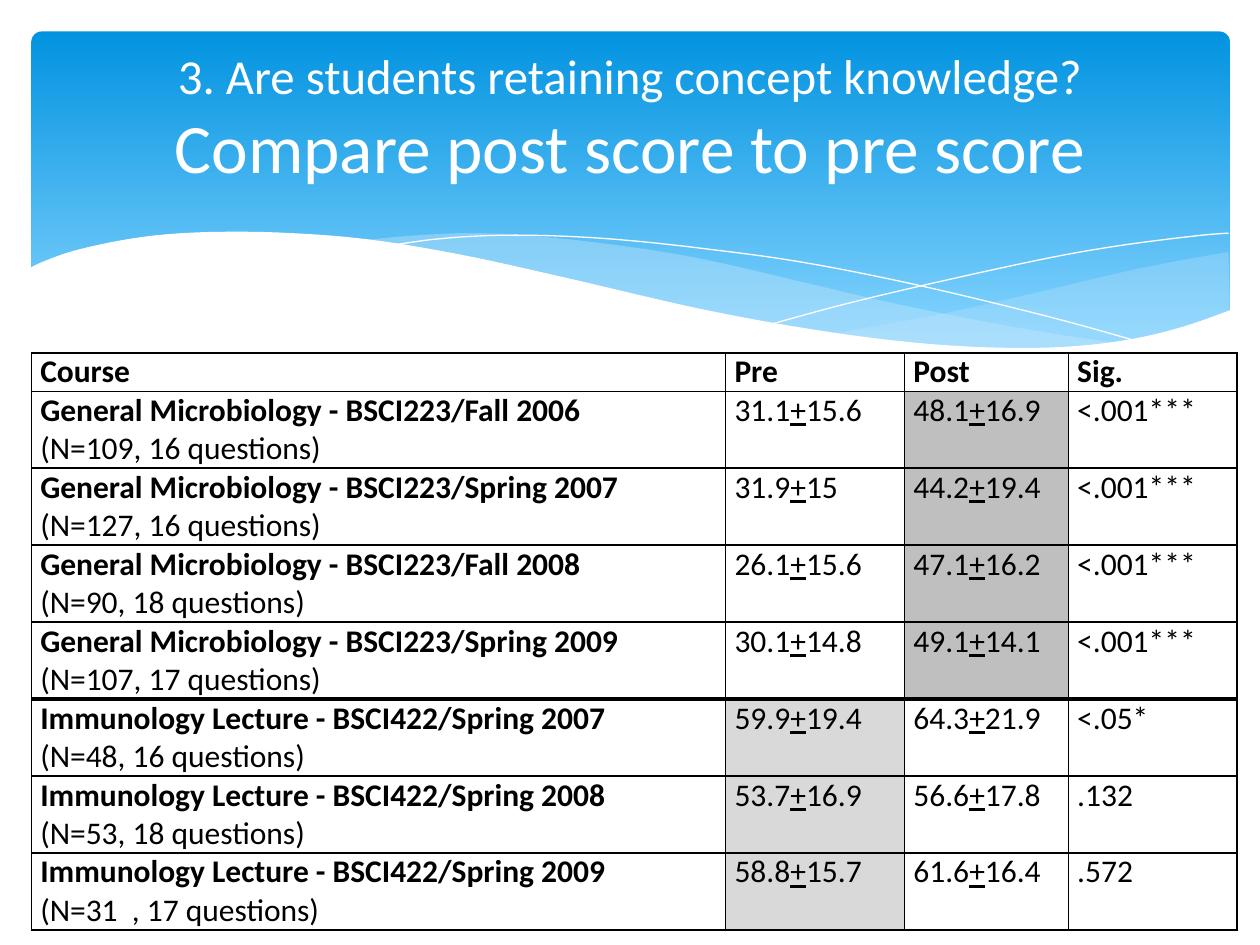
from dataclasses import dataclass
from itertools import product

from lxml.etree import SubElement as Sub
from pptx import Presentation as Deck
from pptx.dml.color import RGBColor as Rgb
from pptx.enum.shapes import MSO_SHAPE as Kind
from pptx.enum.text import MSO_ANCHOR as Anchor, MSO_AUTO_SIZE as Fit, PP_ALIGN as Align
from pptx.oxml.ns import qn
from pptx.util import Pt

PX = 9144  # EMU in one px, 100 px to the inch


@dataclass(frozen=True)
class Theme:
    font: str = "Calibri"
    white: str = "FFFFFF"
    black: str = "000000"
    deep: str = "0293E0"
    light: str = "83D3FE"
    mist: str = "C6E7FC"
    dark_gray: str = "BFBFBF"
    pale_gray: str = "D9D9D9"
    lead: float = 27.9
    head: float = 39.6
    body: float = 18
    thin: float = 1
    thick: float = 2.25


T = Theme()

# Wave knots, in px from the corner of the banner
BACK = [[(950, 175), (910, 182), (866, 191), (807, 205), (728, 223), (636, 240)],
        [(636, 240), (680, 246), (732, 251), (789, 253), (838, 250), (888, 242),
         (924, 232), (951, 222)]]
FRONT = [[(868, 248), (812, 240), (750, 229), (681, 215), (604, 197), (544, 183),
          (489, 173), (417, 164), (355, 160), (303, 162), (261, 166)],
         [(261, 166), (317, 174), (379, 186), (424, 197), (505, 215), (576, 230),
          (640, 241), (697, 249), (760, 253), (813, 253), (868, 248)]]
FALL = [[(284, 170), (319, 165), (362, 162), (408, 162), (464, 165), (531, 172),
         (611, 183), (702, 201), (806, 226), (882, 247)]]
RISE = [[(588, 232), (647, 216), (723, 198), (811, 179), (870, 169), (926, 162),
         (950, 160)]]
FOOT = [[(952, 221), (915, 234), (874, 244), (825, 250), (768, 251), (701, 247),
         (623, 237), (530, 220), (422, 195), (340, 177), (267, 165), (205, 160),
         (152, 159), (107, 161), (70, 166), (34, 174), (11, 182), (-2, 188)],
        [(-2, 304), (952, 304)]]

HEADS = ["Course", "Pre", "Post", "Sig."]
ROWS = [
    ("General Microbiology - BSCI223/Fall 2006", "(N=109, 16 questions)",
     "31.1+15.6", "48.1+16.9", "<.001***"),
    ("General Microbiology - BSCI223/Spring 2007", "(N=127, 16 questions)",
     "31.9+15", "44.2+19.4", "<.001***"),
    ("General Microbiology - BSCI223/Fall 2008", "(N=90, 18 questions)",
     "26.1+15.6", "47.1+16.2", "<.001***"),
    ("General Microbiology - BSCI223/Spring 2009", "(N=107, 17 questions)",
     "30.1+14.8", "49.1+14.1", "<.001***"),
    ("Immunology Lecture - BSCI422/Spring 2007", "(N=48, 16 questions)",
     "59.9+19.4", "64.3+21.9", "<.05*"),
    ("Immunology Lecture - BSCI422/Spring 2008", "(N=53, 18 questions)",
     "53.7+16.9", "56.6+17.8", ".132"),
    ("Immunology Lecture - BSCI422/Spring 2009", "(N=31  , 17 questions)",
     "58.8+15.7", "61.6+16.4", ".572"),
]
SPLIT = 4  # last row of the first course
COLS = [551, 142, 130, 134]
HEAD_H, ROW_H = 28, 57


def style(item, **props):
    for key, val in props.items():
        setattr(item, key, val)


def ink(run, size, color, **more):
    style(run.font, name=T.font, size=Pt(size), **more)
    run.font.color.rgb = Rgb.from_string(color)


def paint(item, color):
    item.fill.solid()
    item.fill.fore_color.rgb = Rgb.from_string(color)


def smooth(knots, steps=6):
    """Points of a soft curve through all knots."""
    if len(knots) < 3:
        return knots
    ends = [knots[0], *knots, knots[-1]]
    dots = [knots[0]]
    for (a, b, c, d), n in product(zip(ends, ends[1:], ends[2:], ends[3:]),
                                   range(1, steps + 1)):
        t = n / steps
        dots.append(tuple(
            q + t / 2 * (r - p + t * (2 * p - 5 * q + 4 * r - s
                                      + t * (3 * (q - r) + s - p)))
            for p, q, r, s in zip(a, b, c, d)))
    return dots


def wave(slide, box, parts, fill=None, alpha=100):
    """A filled band, or a hairline when no fill is given."""
    dots = [(round((box[0] + x) * PX), round((box[1] + y) * PX))
            for part in parts for x, y in smooth(part)]
    pen = slide.shapes.build_freeform(*dots[0], scale=1.0)
    pen.add_line_segments(dots[1:], close=fill is not None)
    shape = pen.convert_to_shape()
    shape.shadow.inherit = False
    if fill is None:
        shape.fill.background()
        shape.line.color.rgb = Rgb.from_string(T.white)
        shape.line.width = 0
        return
    paint(shape, fill)
    shape.line.fill.background()
    if alpha < 100:
        tint = next(shape.element.spPr.iter(qn("a:srgbClr")))
        Sub(tint, qn("a:alpha")).set("val", str(alpha * 1000))


def banner(slide, box):
    # Blue panel
    panel = slide.shapes.add_shape(Kind.ROUNDED_RECTANGLE, *(n * PX for n in box))
    panel.adjustments[0] = 0.03
    panel.shadow.inherit = False
    panel.line.fill.background()
    panel.fill.gradient()
    panel.fill.gradient_angle = 270
    for stop, place, color in zip(panel.fill.gradient_stops, (0, 0.9), (T.deep, T.light)):
        stop.position = place
        stop.color.rgb = Rgb.from_string(color)
    # Waves, back to front
    for parts, fill, alpha in [(BACK, T.mist, 29), (FRONT, T.mist, 40), (FALL, None, 100),
                               (RISE, None, 100), (FOOT, T.white, 100)]:
        wave(slide, box, parts, fill, alpha)


def heading(slide, box):
    title = slide.shapes.title
    style(title, **dict(zip(("left", "top", "width", "height"), (n * PX for n in box))))
    slide.shapes.element.append(title.element)  # in front of the banner
    style(title.text_frame, vertical_anchor=Anchor.MIDDLE, auto_size=Fit.NONE, word_wrap=True)
    para = title.text_frame.paragraphs[0]
    para.alignment = Align.CENTER
    for n, (text, size) in enumerate([("3. Are students retaining concept knowledge?", T.lead),
                                      ("Compare post score to pre score", T.head)]):
        if n:
            para.add_line_break()
        run = para.add_run()
        run.text = text
        ink(run, size, T.white)


def edge(cell, **widths):
    props = cell._tc.get_or_add_tcPr()
    for n, side in enumerate(("lnL", "lnR", "lnT", "lnB")):
        line = Sub(props, qn("a:" + side), w=str(Pt(widths.get(side, T.thin))))
        Sub(Sub(line, qn("a:solidFill")), qn("a:srgbClr"), val=T.black)
        props.insert(n, line)  # borders come before the fill


def write(cell, lines, bold):
    """Fill a cell; each plus sign is underlined to read as plus or minus."""
    style(cell, margin_left=7 * PX, margin_right=7 * PX, margin_top=0, margin_bottom=0)
    for n, line in enumerate(lines):
        frame = cell.text_frame
        para = frame.add_paragraph() if n else frame.paragraphs[0]
        low, plus, high = line.partition("+")
        for text in filter(None, (low, plus, high)):
            run = para.add_run()
            run.text = text
            ink(run, T.body, T.black, bold=bold and n == 0, underline=text == "+")


def shade(row, col):
    if col == 1 and row:
        return T.white if row <= SPLIT else T.pale_gray
    return T.dark_gray if col == 2 and 1 <= row <= SPLIT else None


def scores(slide, box):
    grid = slide.shapes.add_table(len(ROWS) + 1, len(COLS), *(n * PX for n in box)).table
    style(grid, first_row=False, horz_banding=False)
    for col, width in zip(grid.columns, COLS):
        col.width = width * PX
    for n, row in enumerate(grid.rows):
        row.height = (ROW_H if n else HEAD_H) * PX
    lines = [[[head] for head in HEADS]]
    lines += [[[name, count], [pre], [post], [sig]] for name, count, pre, post, sig in ROWS]
    for r, c in product(range(len(lines)), range(len(COLS))):
        cell = grid.cell(r, c)
        write(cell, lines[r][c], bold=r == 0 or c == 0)
        color = shade(r, c)
        if color:
            paint(cell, color)
        else:
            cell.fill.background()
        edge(cell, lnT=T.thick if r == SPLIT + 1 else T.thin,
             lnB=T.thick if r == SPLIT else T.thin)


def main():
    deck = Deck()
    style(deck, slide_width=1000 * PX, slide_height=750 * PX)
    slide = deck.slides.add_slide(deck.slide_layouts[5])
    banner(slide, (25, 25, 951, 270))
    heading(slide, (50, 30, 900, 125))
    scores(slide, (25, 280, sum(COLS), HEAD_H + ROW_H * len(ROWS)))
    deck.save("out.pptx")


if __name__ == "__main__":
    main()
